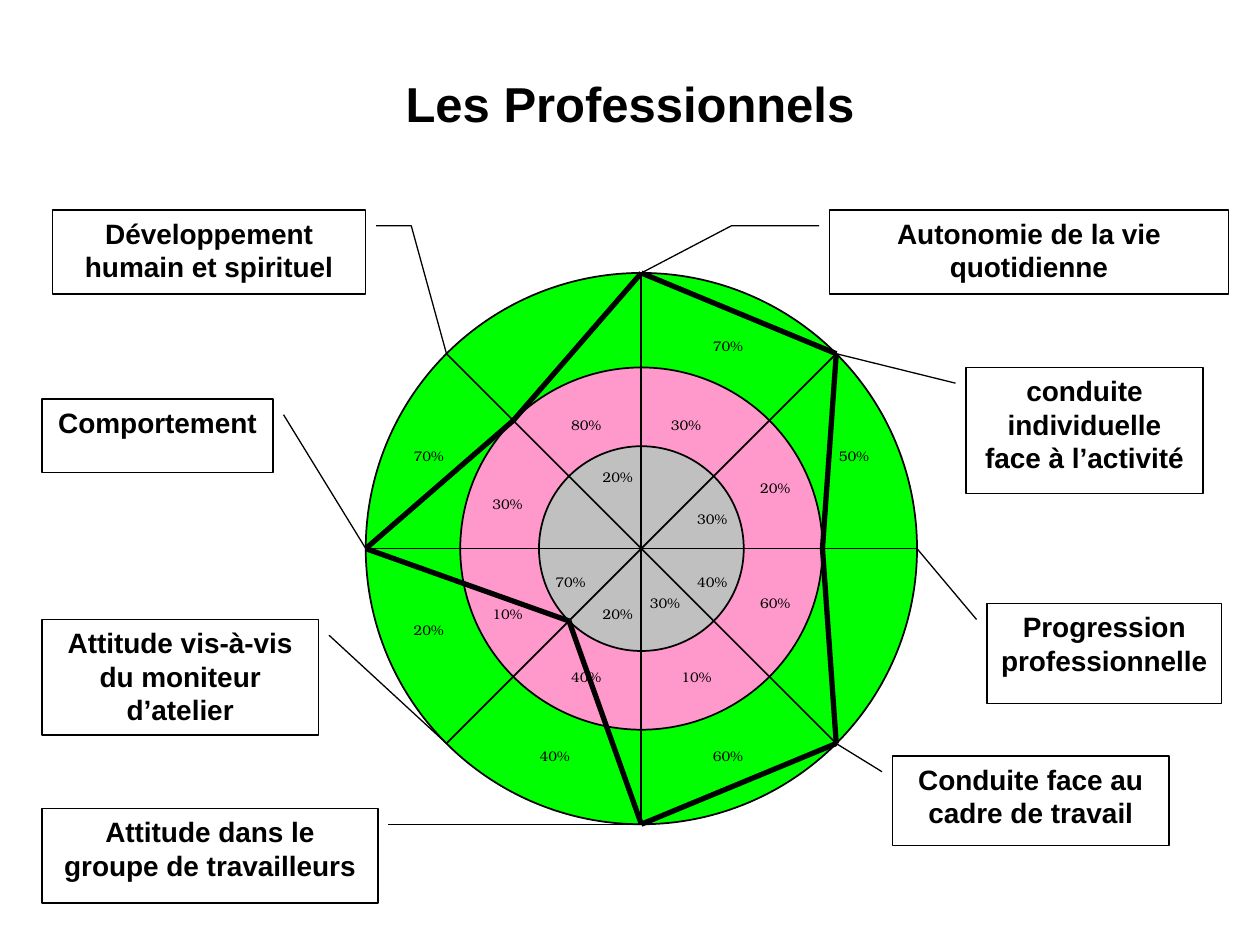
from itertools import pairwise
from math import cos, radians, sin

from lxml.etree import SubElement
from pptx import Presentation
from pptx.dml.color import RGBColor
from pptx.enum.shapes import MSO_CONNECTOR, MSO_SHAPE
from pptx.enum.text import MSO_ANCHOR, PP_ALIGN
from pptx.oxml.ns import qn
from pptx.util import Pt

COLOURS = {"ink": "000000", "paper": "FFFFFF", "outer": "00FF00",
           "middle": "FF99CC", "inner": "C0C0C0"}
CENTRE_X, CENTRE_Y = 366.5, 313.5
RADII = {"outer": 157.5, "middle": 103.5, "inner": 58.5}

# Ring reached on each spoke, every 45 degrees clockwise from the top
PROFILE = ["outer", "outer", "middle", "outer", "outer", "inner", "outer", "middle"]

# Text, box (left, top, width, height), spoke number, elbow distance from the box
CALLOUTS = [
    ("conduite individuelle face à l’activité", (552, 210, 135.5, 72), 1, None),
    ("Autonomie de la vie quotidienne", (474, 120, 228, 48), 0, 56),
    ("Progression professionnelle", (564, 345, 134, 57), 2, None),
    ("Conduite face au cadre de travail", (510, 432, 158, 51), 3, None),
    ("Attitude dans le groupe de travailleurs", (24, 462, 192, 54), 4, 142),
    ("Attitude vis-à-vis du moniteur d’atelier", (24, 354, 158, 66), 5, None),
    ("Comportement", (24, 228, 132, 42), 6, None),
    ("Développement humain et spirituel", (30, 120, 179, 48), 7, 26),
]

# Percentage, left, top
SCORES = [
    (30, 383, 237), (70, 407, 192), (30, 398, 291), (20, 434, 273), (50, 479, 255),
    (40, 398, 327), (60, 434, 339), (30, 371, 339), (60, 407, 426), (10, 389, 381),
    (40, 308, 426), (40, 326, 381), (20, 344, 345), (20, 236, 354), (10, 281, 345),
    (70, 317, 327), (30, 281, 282), (70, 236, 255), (20, 344, 267), (80, 326, 237),
]


def colour(name):
    return RGBColor.from_string(COLOURS[name])


def spoke_point(spoke, ring):
    angle = radians(45 * spoke)
    radius = RADII[ring]
    return CENTRE_X + radius * sin(angle), CENTRE_Y - radius * cos(angle)


class SlideBuilder:
    label_font = "Arial"
    score_font = "TeX Gyre Bonum"
    leader_gap, leader_drop = 6, 9

    def __init__(self, slide):
        self.slide = slide

    def add_text(self, shape, text, font_name, size, bold=False):
        frame = shape.text_frame
        frame.vertical_anchor = MSO_ANCHOR.TOP
        paragraph = frame.paragraphs[0]
        paragraph.alignment = PP_ALIGN.CENTER
        run = paragraph.add_run()
        run.text = text
        run.font.name = font_name
        run.font.size = Pt(size)
        run.font.bold = bold
        run.font.color.rgb = colour("ink")

    def title(self, text):
        shape = self.slide.shapes.title
        shape.left, shape.top, shape.width, shape.height = Pt(0), Pt(36), Pt(720), Pt(41)
        shape.text_frame.margin_top = Pt(6)
        self.add_text(shape, text, self.label_font, 28, bold=True)

    def shape(self, preset, box, fill, line_width):
        shape = self.slide.shapes.add_shape(preset, *map(Pt, box))
        shape.shadow.inherit = False
        shape.fill.solid()
        shape.fill.fore_color.rgb = colour(fill)
        shape.line.color.rgb = colour("ink")
        shape.line.width = Pt(line_width)
        return shape

    def ring(self, name):
        radius = RADII[name]
        box = (CENTRE_X - radius, CENTRE_Y - radius, 2 * radius, 2 * radius)
        self.shape(MSO_SHAPE.FLOWCHART_SUMMING_JUNCTION, box, name, 1)

    def line(self, start, end, width):
        connector = self.slide.shapes.add_connector(
            MSO_CONNECTOR.STRAIGHT, *map(Pt, (*start, *end)))
        connector.line.color.rgb = colour("ink")
        connector.line.width = Pt(width)
        SubElement(connector._element.spPr, qn("a:effectLst"))

    def callout(self, text, box, target, elbow):
        """Draw a box whose leader runs from its inner side to the target point."""
        left, top, width, height = box
        on_left = left < CENTRE_X
        side, direction = (left + width, 1) if on_left else (left, -1)
        level = top + self.leader_drop
        points = [(side + direction * self.leader_gap, level)]
        if elbow is not None:
            points.append((side + direction * elbow, level))
        points.append(target)
        preset = MSO_SHAPE.LINE_CALLOUT_1 if elbow is None else MSO_SHAPE.LINE_CALLOUT_2
        shape = self.shape(preset, box, "paper", 0.75)
        for index, (x, y) in enumerate(points):
            shape.adjustments[2 * index] = (y - top) / height
            shape.adjustments[2 * index + 1] = (x - left) / width
        shape.text_frame.word_wrap = True
        self.add_text(shape, text, self.label_font, 16, bold=True)

    def score(self, percentage, left, top):
        shape = self.slide.shapes.add_textbox(Pt(left), Pt(top), Pt(18), Pt(9))
        frame = shape.text_frame
        frame.word_wrap = False
        frame.margin_left = frame.margin_right = frame.margin_bottom = 0
        frame.margin_top = Pt(1)
        self.add_text(shape, f"{percentage}%", self.score_font, 8)


def main():
    presentation = Presentation()
    presentation.slide_width, presentation.slide_height = Pt(720), Pt(540)
    slide = presentation.slides.add_slide(presentation.slide_layouts[5])
    builder = SlideBuilder(slide)

    builder.title("Les Professionnels")
    for name in RADII:
        builder.ring(name)
    for spoke in (0, 2):
        builder.line(spoke_point(spoke, "outer"), spoke_point(spoke + 4, "outer"), 1)
    for text, box, spoke, elbow in CALLOUTS:
        builder.callout(text, box, spoke_point(spoke, "outer"), elbow)
    for score in SCORES:
        builder.score(*score)
    profile = [spoke_point(spoke, ring) for spoke, ring in enumerate(PROFILE)]
    for start, end in pairwise(profile + profile[:1]):
        builder.line(start, end, 3)

    presentation.save("out.pptx")


if __name__ == "__main__":
    main()
